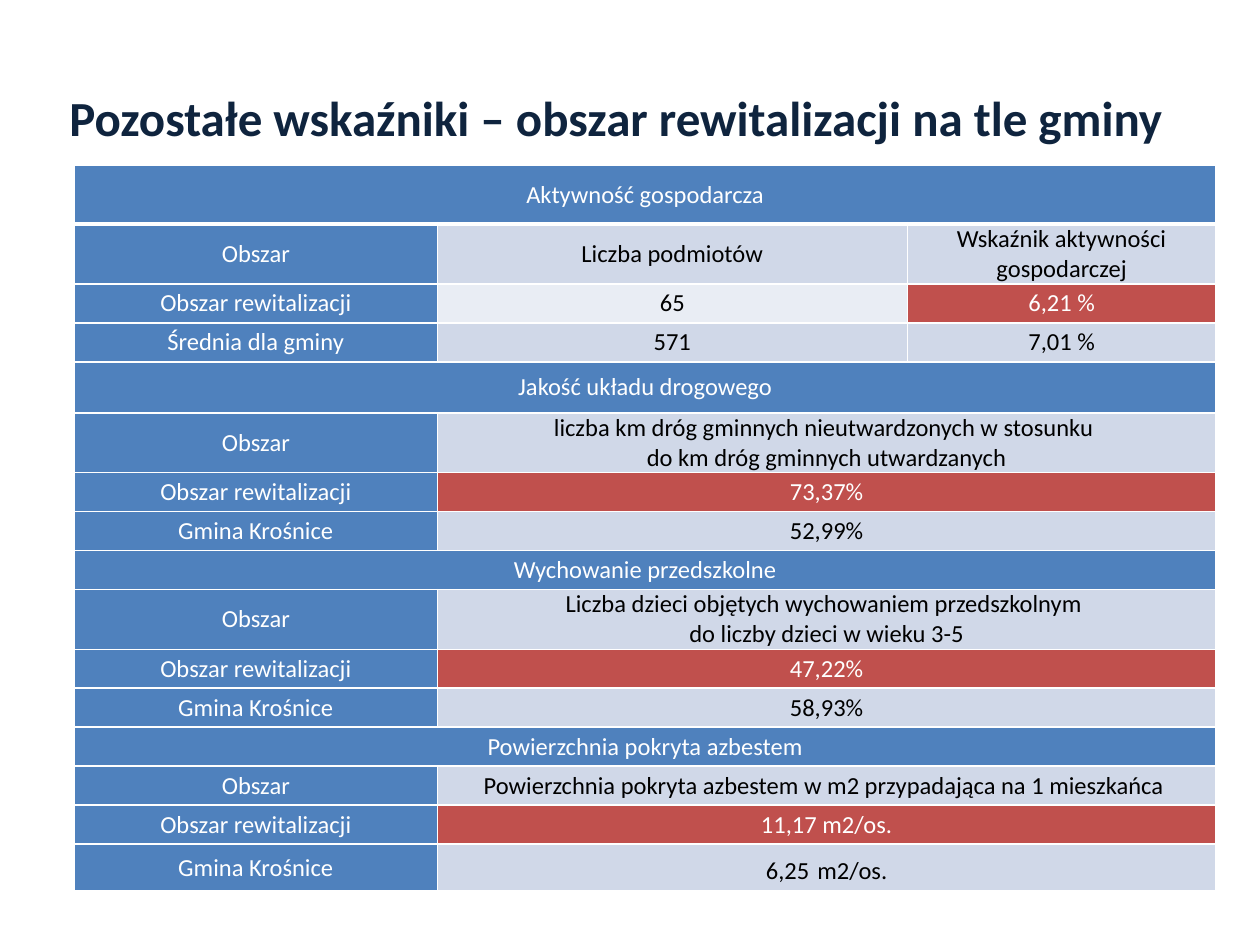
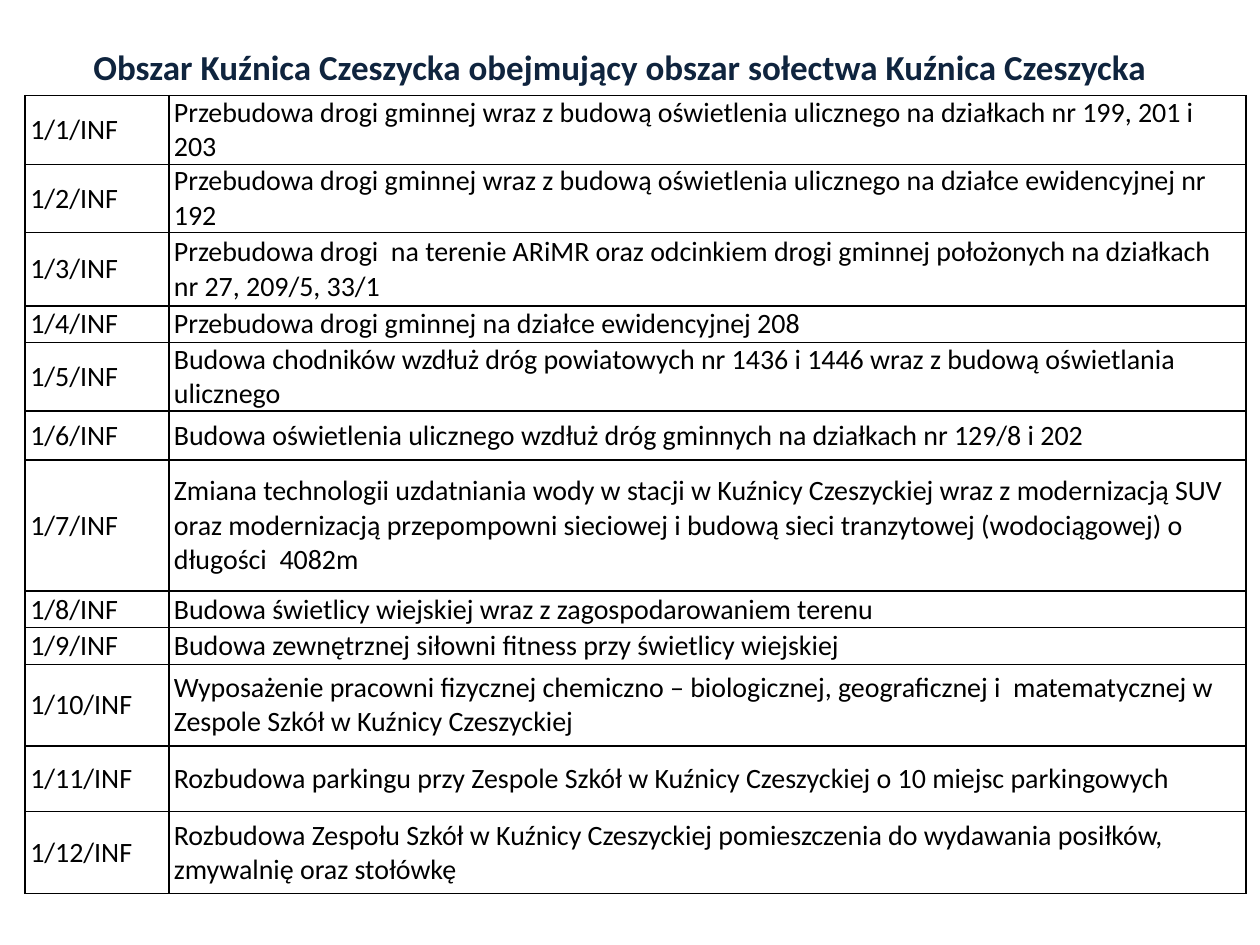
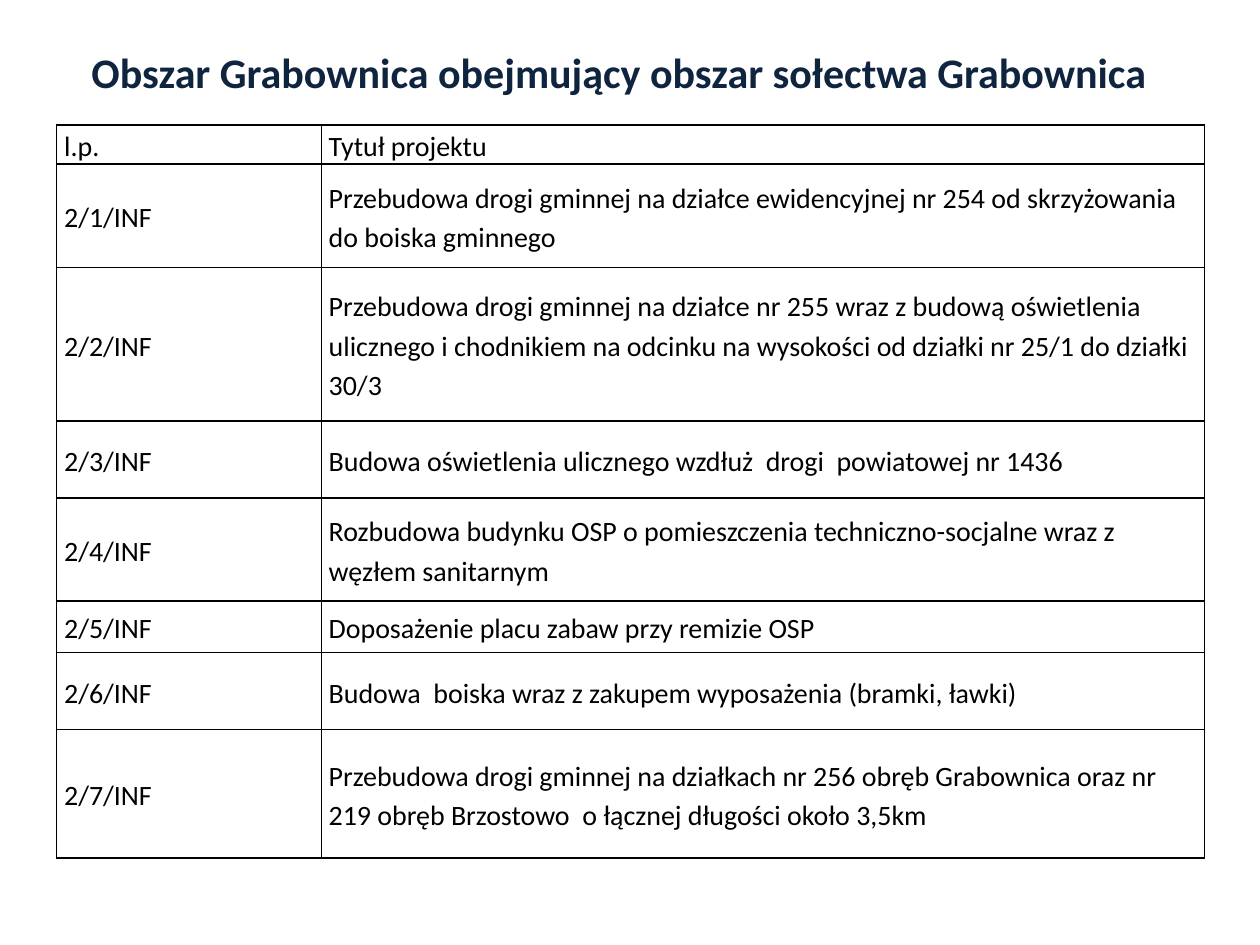
from lxml.etree import SubElement
from pptx import Presentation
from pptx.dml.color import RGBColor
from pptx.enum.text import MSO_ANCHOR, MSO_AUTO_SIZE, PP_ALIGN
from pptx.oxml import parse_xml
from pptx.oxml.ns import nsdecls, qn
from pptx.util import Pt

FONT = "Calibri"
NAVY, BLUE, RED = "0F243E", "4F81BD", "C0504D"
PALE, PALEST, WHITE, BLACK = "D0D8E8", "E9EDF4", "FFFFFF", "000000"
AREA = "Obszar rewitalizacji"
COMMUNE = "Gmina Krośnice"
WIDE_SPACE = 20

INDICATORS = [
    ("Aktywność gospodarcza",),
    ("Obszar", "Liczba podmiotów", "Wskaźnik aktywności gospodarczej"),
    (AREA, "65", "6,21 %"),
    ("Średnia dla gminy", "571", "7,01 %"),
    ("Jakość układu drogowego",),
    ("Obszar", "liczba km dróg gminnych nieutwardzonych w stosunku \ndo km dróg gminnych utwardzanych"),
    (AREA, "73,37%"),
    (COMMUNE, "52,99%"),
    ("Wychowanie przedszkolne",),
    ("Obszar", "Liczba dzieci objętych wychowaniem przedszkolnym \ndo liczby dzieci w wieku 3-5"),
    (AREA, "47,22%"),
    (COMMUNE, "58,93%"),
    ("Powierzchnia pokryta azbestem",),
    ("Obszar", "Powierzchnia pokryta azbestem w m2 przypadająca na 1 mieszkańca "),
    (AREA, "11,17 m2/os."),
    (COMMUNE, [("6,25", 14), (" ", WIDE_SPACE), ("m2/os.", 14)]),
]

KUZNICA_PROJECTS = [
    "Przebudowa drogi gminnej wraz z budową oświetlenia ulicznego na działkach nr 199, 201 i 203",
    "Przebudowa drogi gminnej wraz z budową oświetlenia ulicznego na działce ewidencyjnej nr 192",
    "Przebudowa drogi  na terenie ARiMR oraz odcinkiem drogi gminnej położonych na działkach nr 27, 209/5, 33/1",
    "Przebudowa drogi gminnej na działce ewidencyjnej 208",
    "Budowa chodników wzdłuż dróg powiatowych nr 1436 i 1446 wraz z budową oświetlania ulicznego",
    "Budowa oświetlenia ulicznego wzdłuż dróg gminnych na działkach nr 129/8 i 202",
    "Zmiana technologii uzdatniania wody w stacji w Kuźnicy Czeszyckiej wraz z modernizacją SUV oraz "
    "modernizacją przepompowni sieciowej i budową sieci tranzytowej (wodociągowej) o długości  4082m",
    "Budowa świetlicy wiejskiej wraz z zagospodarowaniem terenu",
    "Budowa zewnętrznej siłowni fitness przy świetlicy wiejskiej",
    "Wyposażenie pracowni fizycznej chemiczno – biologicznej, geograficznej i  matematycznej w "
    "Zespole Szkół w Kuźnicy Czeszyckiej",
    "Rozbudowa parkingu przy Zespole Szkół w Kuźnicy Czeszyckiej o 10 miejsc parkingowych",
    "Rozbudowa Zespołu Szkół w Kuźnicy Czeszyckiej pomieszczenia do wydawania posiłków, "
    "zmywalnię oraz stołówkę",
]

GRABOWNICA_PROJECTS = [
    "Przebudowa drogi gminnej na działce ewidencyjnej nr 254 od skrzyżowania do boiska gminnego",
    "Przebudowa drogi gminnej na działce nr 255 wraz z budową oświetlenia ulicznego i chodnikiem "
    "na odcinku na wysokości od działki nr 25/1 do działki 30/3",
    "Budowa oświetlenia ulicznego wzdłuż  drogi  powiatowej nr 1436",
    "Rozbudowa budynku OSP o pomieszczenia techniczno-socjalne wraz z węzłem sanitarnym",
    "Doposażenie placu zabaw przy remizie OSP",
    "Budowa  boiska wraz z zakupem wyposażenia (bramki, ławki)",
    "Przebudowa drogi gminnej na działkach nr 256 obręb Grabownica oraz nr 219 obręb Brzostowo  "
    "o łącznej długości około 3,5km",
]


def number_projects(area, projects):
    """Pair each project with its code."""
    return [(f"{area}/{number}/INF", project) for number, project in enumerate(projects, 1)]


TALL, LOW = 33.8, 22.3
SLIDES = [
    {
        "title": "Pozostałe wskaźniki – obszar rewitalizacji na tle gminy",
        "title_size": 28, "title_height": 90, "title_alignment": PP_ALIGN.LEFT,
        "rows": INDICATORS, "left": 42.5, "top": 94.3,
        "columns": [207.4, 268.6, 176.4],
        "heights": [TALL, TALL, LOW, LOW, 29.2, TALL, LOW, LOW, LOW, TALL] + [LOW] * 5 + [26.9],
        "size": 14, "inset": 3.6, "border": WHITE, "header_line": 3, "coloured": True,
        "paragraph": {"alignment": PP_ALIGN.CENTER},
    },
    {
        "title": "Obszar Kuźnica Czeszycka obejmujący obszar sołectwa Kuźnica Czeszycka ",
        "title_size": 20, "title_height": 33, "title_alignment": PP_ALIGN.CENTER,
        "rows": number_projects(1, KUZNICA_PROJECTS), "left": 14.4, "top": 54.7,
        "columns": [82.1, 615.6],
        "heights": [28.1, 38.2, 41.8, 20.9, 38.2, 28.1, 74.9, 20.9, 20.9, 46.8, 37.4, 46.8],
        "size": 16, "inset": 2.9, "border": BLACK, "header_line": 1, "coloured": False,
        "paragraph": {},
    },
    {
        "title": "Obszar Grabownica obejmujący obszar sołectwa Grabownica ",
        "title_size": 24, "title_height": 39, "title_alignment": PP_ALIGN.CENTER,
        "rows": [("l.p.", "Tytuł projektu")] + number_projects(2, GRABOWNICA_PROJECTS),
        "left": 32.4, "top": 71.3,
        "columns": [151.2, 504.7],
        "heights": [LOW, 59, 87.8, 43.9, 59, 29.5, 43.9, 73.4],
        "size": 16, "inset": 4.3, "border": BLACK, "header_line": 1, "coloured": False,
        "paragraph": {"line_spacing": 1.15},
    },
]


def colour(value):
    """Turn a hex string into a colour."""
    return RGBColor.from_string(value)


def apply_format(target, values):
    """Set attributes from a dict."""
    for name, value in values.items():
        setattr(target, name, value)


def add_text(paragraph, text, size, text_colour, bold=False):
    """Add a run in the deck font."""
    run = paragraph.add_run()
    run.text = text
    apply_format(run.font, {"name": FONT, "size": Pt(size), "bold": bold})
    run.font.color.rgb = colour(text_colour)


def add_title(slide, content):
    """Place and fill the slide title."""
    title = slide.shapes.title
    apply_format(title, {"left": Pt(32.4), "top": Pt(21.6), "width": Pt(648),
                         "height": Pt(content["title_height"])})
    apply_format(title.text_frame, {"auto_size": MSO_AUTO_SIZE.NONE, "word_wrap": True,
                                    "vertical_anchor": MSO_ANCHOR.MIDDLE})
    paragraph = title.text_frame.paragraphs[0]
    paragraph.alignment = content["title_alignment"]
    add_text(paragraph, content["title"], content["title_size"], NAVY, True)


def set_borders(cell, line_colour, widths):
    """Draw the left, right, top and bottom cell lines."""
    properties = cell._tc.get_or_add_tcPr()
    for position, (side, width) in enumerate(zip("LRTB", widths)):
        properties.insert(position, parse_xml(
            f'<a:ln{side} {nsdecls("a")} w="{Pt(width)}"><a:solidFill>'
            f'<a:srgbClr val="{line_colour}"/></a:solidFill></a:ln{side}>'))


def cell_colours(texts, column):
    """Choose fill and text colour from the role of the cell."""
    if column == 0 or len(texts) == 1:
        return BLUE, WHITE
    if texts[0] == AREA:
        return (RED, WHITE) if column >= len(texts) - 1 else (PALEST, BLACK)
    return PALE, BLACK


def fill_cell(cell, text, text_colour, content):
    """Write the cell text, with line breaks of the same size."""
    paragraph = cell.text_frame.paragraphs[0]
    apply_format(paragraph, content["paragraph"])
    size = content["size"]
    if isinstance(text, str):
        for number, line in enumerate(text.split("\n")):
            if number:
                paragraph.add_line_break()
                SubElement(paragraph._p[-1], qn("a:rPr"), sz=str(size * 100))
            add_text(paragraph, line, size, text_colour)
    else:
        for piece, piece_size in text:
            add_text(paragraph, piece, piece_size, text_colour)


def add_table(slide, content):
    """Build the table, the last text of a row spanning the columns left."""
    rows, columns, heights = content["rows"], content["columns"], content["heights"]
    table = slide.shapes.add_table(
        len(rows), len(columns), Pt(content["left"]), Pt(content["top"]),
        Pt(sum(columns)), Pt(sum(heights))).table
    apply_format(table, {"first_row": False, "horz_banding": False})
    for column, width in zip(table.columns, columns):
        column.width = Pt(width)
    for row_number, texts in enumerate(rows):
        table.rows[row_number].height = Pt(heights[row_number])
        top = content["header_line"] if row_number == 1 else 1
        bottom = content["header_line"] if row_number == 0 else 1
        for column in range(len(columns)):
            cell = table.cell(row_number, column)
            apply_format(cell, {"margin_left": Pt(content["inset"]), "margin_right": Pt(content["inset"]),
                                "margin_top": 0, "margin_bottom": 0,
                                "vertical_anchor": MSO_ANCHOR.MIDDLE})
            text_colour = BLACK
            if content["coloured"]:
                fill, text_colour = cell_colours(texts, column)
                cell.fill.solid()
                cell.fill.fore_color.rgb = colour(fill)
            else:
                cell.fill.background()
            set_borders(cell, content["border"], (1, 1, top, bottom))
            if column < len(texts):
                fill_cell(cell, texts[column], text_colour, content)
        if len(texts) < len(columns):
            table.cell(row_number, len(texts) - 1).merge(table.cell(row_number, len(columns) - 1))


def main():
    """Build the slides and save the file."""
    presentation = Presentation()
    apply_format(presentation, {"slide_width": Pt(720), "slide_height": Pt(540)})
    for content in SLIDES:
        slide = presentation.slides.add_slide(presentation.slide_layouts[5])
        add_title(slide, content)
        add_table(slide, content)
    presentation.save("out.pptx")


if __name__ == "__main__":
    main()
